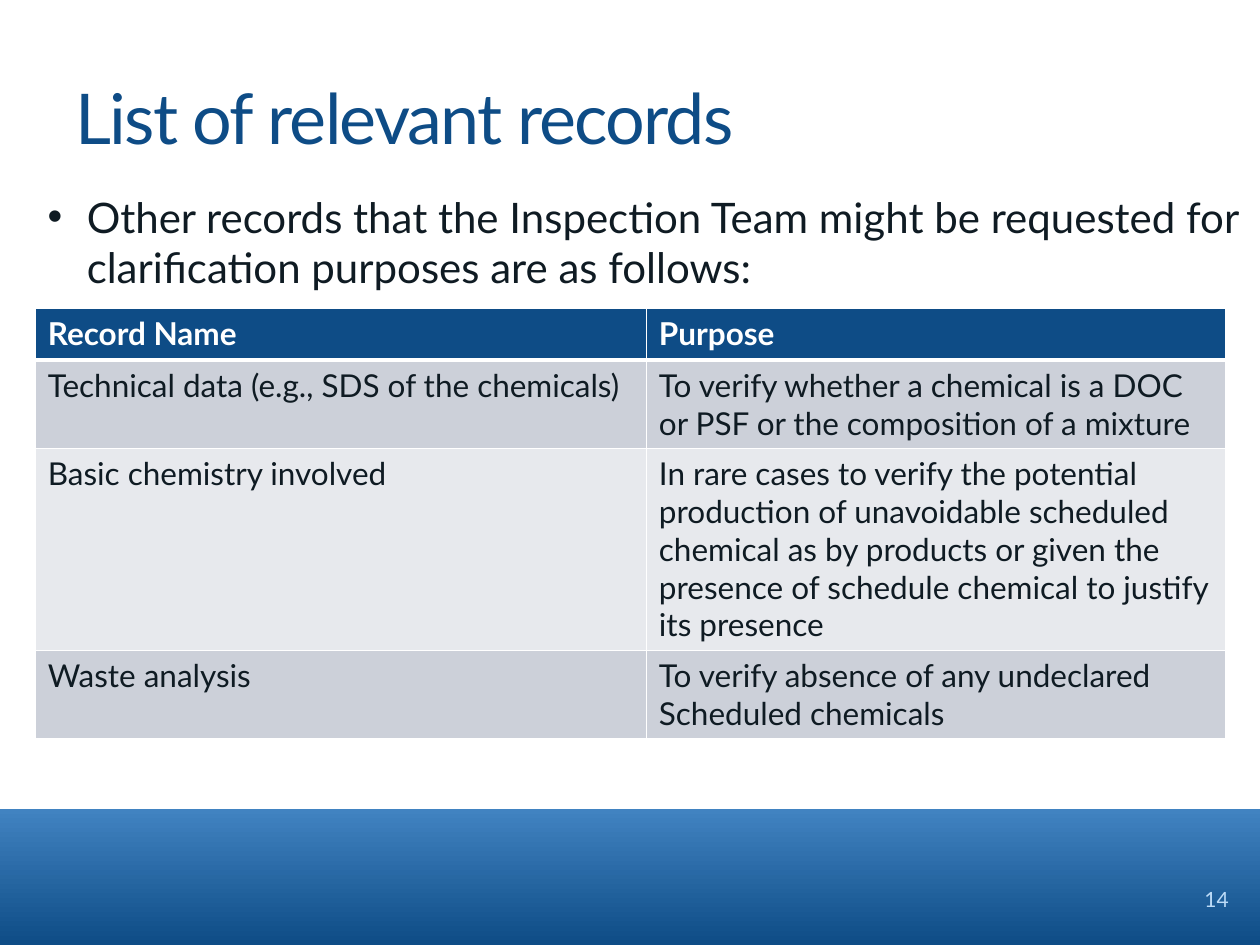
from pptx import Presentation
from pptx import util as u
from pptx.dml.color import RGBColor
from pptx.enum import shapes, text
from pptx.oxml import parse_xml
from pptx.oxml.ns import nsdecls

TITLE = "List of relevant records"
INTRO = ("Other records that the Inspection Team might be requested for "
         "clarification purposes are as follows:")
NUMBER = "14"
RECORDS = [
    ("Record Name", "Purpose"),
    ("Technical data (e.g., SDS of the chemicals)",
     "To verify whether a chemical is a DOC or PSF or the composition of a mixture"),
    ("Basic chemistry involved",
     "In rare cases to verify the potential production of unavoidable scheduled "
     "chemical as by products or given the presence of schedule chemical to justify "
     "its presence"),
    ("Waste analysis",
     "To verify absence of any undeclared Scheduled chemicals"),
]
COLS = (12.32, 11.68)
ROWS = (1.04, 1.76, 4.07, 1.76)
NAVY, SKY, INK, WHITE, PALE = "0E4C86", "4183C1", "0F1B23", "FFFFFF", "BDDCF8"
BANDS = ("E7E9ED", "CCD0D9")


def rgb(value):
    return RGBColor.from_string(value)


def box(left, top, width, height):
    return [u.Cm(v) for v in (left, top, width, height)]


def write(tf, words, size, color, align=text.PP_ALIGN.LEFT, bold=False):
    tf.word_wrap = True
    p = tf.paragraphs[0]
    p.alignment = align
    r = p.add_run()
    r.text = words
    for name, value in dict(name="Lato", size=u.Pt(size), bold=bold).items():
        setattr(r.font, name, value)
    r.font.color.rgb = rgb(color)
    return p, r


def border(cell, widths):
    tc_pr = cell._tc.get_or_add_tcPr()
    for i, (side, width) in enumerate(widths.items()):
        tc_pr.insert(i, parse_xml(
            f'<a:ln{side} {nsdecls("a")} w="{u.Pt(width)}"><a:solidFill>'
            f'<a:srgbClr val="{WHITE}"/></a:solidFill></a:ln{side}>'))


def add_footer(s):
    sp = s.shapes.add_shape(shapes.MSO_SHAPE.RECTANGLE, *box(0, 16.31, 25.4, 2.74))
    sp.shadow.inherit = False
    sp.line.fill.background()
    sp.fill.gradient()
    sp.fill.gradient_angle = 270
    for stop, color in zip(sp.fill.gradient_stops, (SKY, NAVY)):
        stop.color.rgb = rgb(color)
    tf = s.shapes.add_textbox(*box(22.91, 17.68, 2.11, 0.89)).text_frame
    tf.vertical_anchor = text.MSO_ANCHOR.MIDDLE
    write(tf, NUMBER, 12, PALE, text.PP_ALIGN.RIGHT)


def add_title(s):
    sp = s.shapes.title
    sp.left, sp.top, sp.width, sp.height = box(1.27, 0.76, 22.63, 3.18)
    sp.text_frame.vertical_anchor = text.MSO_ANCHOR.MIDDLE
    p, r = write(sp.text_frame, TITLE, 40, NAVY)
    r.font._element.set("spc", "-100")


def add_table(s):
    frame = s.shapes.add_table(len(ROWS), len(COLS),
                               *box(0.71, 6.22, sum(COLS), sum(ROWS)))
    table = frame.table
    for col, width in zip(table.columns, COLS):
        col.width = u.Cm(width)
    for i, (record, height) in enumerate(zip(RECORDS, ROWS)):
        table.rows[i].height = u.Cm(height)
        head = i == 0
        for j, words in enumerate(record):
            cell = table.cell(i, j)
            cell.fill.solid()
            cell.fill.fore_color.rgb = rgb(NAVY if head else BANDS[i % 2])
            border(cell, dict(L=1, R=1, T=3 if i == 1 else 1, B=3 if head else 1))
            write(cell.text_frame, words, 18, WHITE if head else INK, bold=head)


def add_intro(s):
    tf = s.shapes.add_textbox(*box(0.71, 3.73, 26.01, 2.31)).text_frame
    p, r = write(tf, INTRO, 24, INK)
    p_pr = p._p.get_or_add_pPr()
    indent = u.Cm(0.79)
    p_pr.set("marL", str(indent))
    p_pr.set("indent", str(-indent))
    p_pr.append(parse_xml(f'<a:buFont {nsdecls("a")} typeface="Arial"/>'))
    p_pr.append(parse_xml(f'<a:buChar {nsdecls("a")} char="•"/>'))


def main():
    prs = Presentation()
    prs.slide_width, prs.slide_height = u.Cm(25.4), u.Cm(19.05)
    s = prs.slides.add_slide(prs.slide_layouts[5])
    for add in (add_footer, add_title, add_table, add_intro):
        add(s)
    prs.save("out.pptx")


if __name__ == "__main__":
    main()
